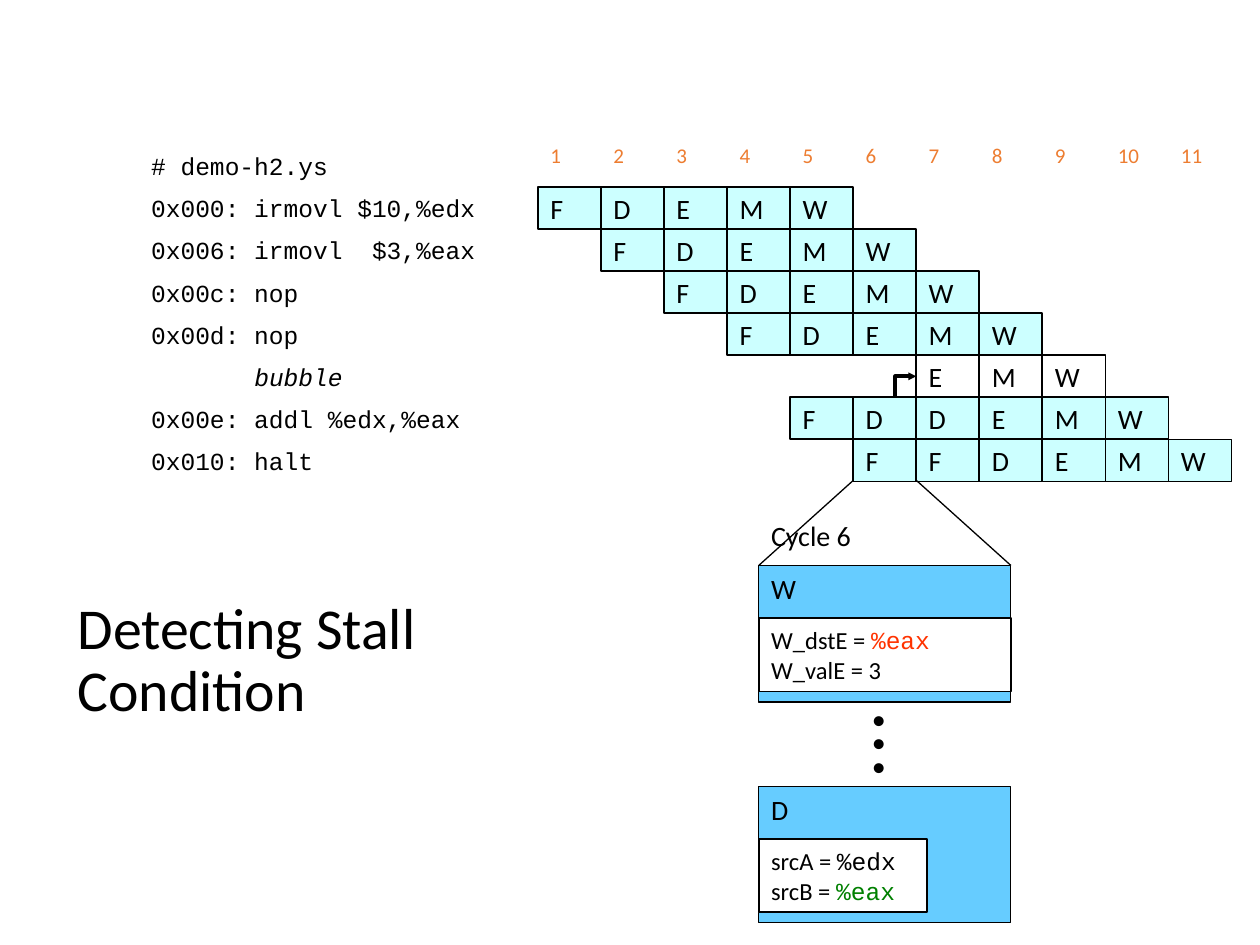
import pptx
import pptx.dml.color
import pptx.enum.shapes
import pptx.enum.text
import pptx.oxml
import pptx.oxml.ns
import pptx.util

PX = 914400 // 120
COL, ROW = 60, 40
SANS, MONO = "Calibri", "Courier New"
BLACK, WHITE, ORANGE = "000000", "FFFFFF", "ED7D31"
RED, GREEN, CYAN, BLUE = "FF3300", "008000", "CCFFFF", "66CCFF"
TOP = pptx.enum.text.MSO_ANCHOR.TOP
MIDDLE = pptx.enum.text.MSO_ANCHOR.MIDDLE

CODE = ["# demo-h2.ys", "0x000: irmovl $10,%edx", "0x006: irmovl  $3,%eax",
        "0x00c: nop", "0x00d: nop", "bubble", "0x00e: addl %edx,%eax",
        "0x010: halt"]
STAGES = [(0, "FDEMW"), (1, "FDEMW"), (2, "FDEMW"), (3, "FDEMW"),
          (6, "EMW"), (4, "FDDEMW"), (5, "FFDEMW")]
BUBBLE_ROW = 4


def px(n):
    return pptx.util.Emu(n * PX)


def rgb(value):
    return pptx.dml.color.RGBColor.from_string(value)


def write(sp, lines, size, anchor=MIDDLE, spacing=None, indent=0):
    tf = sp.text_frame
    tf.word_wrap = True
    tf.vertical_anchor = anchor
    tf.margin_left = px(12 + indent)
    tf.margin_right = px(12)
    tf.margin_top = tf.margin_bottom = px(6)
    for i, runs in enumerate(lines):
        p = tf.add_paragraph() if i else tf.paragraphs[0]
        p.alignment = pptx.enum.text.PP_ALIGN.LEFT
        if spacing:
            p.line_spacing = spacing
        for text, font, color in runs:
            r = p.add_run()
            r.text = text
            r.font.name = font
            r.font.size = pptx.util.Pt(size)
            r.font.color.rgb = rgb(color)
            r.font.italic = text == "bubble"


def label(s, box, lines, size, **layout):
    sp = s.shapes.add_textbox(*map(px, box))
    write(sp, lines, size, **layout)


def block(s, box, lines, size, fill, width=1, anchor=MIDDLE):
    sp = s.shapes.add_shape(pptx.enum.shapes.MSO_SHAPE.RECTANGLE, *map(px, box))
    sp.shadow.inherit = False
    if fill:
        sp.fill.solid()
        sp.fill.fore_color.rgb = rgb(fill)
    else:
        sp.fill.background()
    sp.line.color.rgb = rgb(BLACK)
    sp.line.width = pptx.util.Pt(width)
    write(sp, lines, size, anchor=anchor)


def line(s, x1, y1, x2, y2):
    cn = s.shapes.add_connector(pptx.enum.shapes.MSO_CONNECTOR.STRAIGHT,
                                px(x1), px(y1), px(x2), px(y2))
    cn.line.color.rgb = rgb(BLACK)
    cn.line.width = pptx.util.Pt(0.75)
    pptx.oxml.ns.qn("a:effectLst")
    cn._element.spPr.append(pptx.oxml.parse_xml(
        "<a:effectLst %s/>" % pptx.oxml.ns.nsdecls("a")))


def bubble_arrow(s, x, y):
    fb = s.shapes.build_freeform(px(x), px(y + ROW))
    fb.add_line_segments([(px(x), px(y + 20)), (px(x + 20), px(y + 20))],
                         close=False)
    sp = fb.convert_to_shape()
    sp.shadow.inherit = False
    sp.fill.background()
    sp.line.color.rgb = rgb(BLACK)
    sp.line.width = pptx.util.Pt(2.25)
    sp.line._get_or_add_ln().append(pptx.oxml.parse_xml(
        '<a:tailEnd %s type="triangle" w="sm" len="sm"/>'
        % pptx.oxml.ns.nsdecls("a")))


def code_listing(s, x, y, w):
    for i, text in enumerate(CODE):
        label(s, (x, y + i * ROW, w, ROW), [[(text, MONO, BLACK)]], 14,
              indent=98 if text == "bubble" else 0)


def cycle_numbers(s, x, y):
    for i in range(11):
        label(s, (x + i * COL, y, COL, ROW), [[(str(i + 1), SANS, ORANGE)]], 12)


def pipeline(s, x, y):
    for row, (start, stages) in enumerate(STAGES):
        for i, stage in enumerate(stages):
            box = (x + (start + i) * COL, y + row * ROW, COL, ROW)
            block(s, box, [[(stage, SANS, BLACK)]], 16,
                  None if row == BUBBLE_ROW else CYAN)
    bubble_arrow(s, x + 6 * COL - 20, y + BUBBLE_ROW * ROW)


def stage_panel(s, x, y, w, name, inner_w, lines):
    block(s, (x, y, w, 130), [[(name, SANS, BLACK)]], 16, BLUE, 0.75, TOP)
    block(s, (x, y + 50, inner_w, 70), lines, 14, WHITE)


def cycle_detail(s, x, y, w):
    middle = x + w // 2
    line(s, middle - COL // 2, y - 81, x, y)
    line(s, middle + COL // 2, y - 81, x + w, y)
    label(s, (x, y - 51, w, 44), [[("Cycle 6", SANS, BLACK)]], 16, anchor=TOP)
    stage_panel(s, x, y, w, "W", w,
                [[("W_dstE = ", SANS, BLACK), ("%eax", MONO, RED)],
                 [("W_valE = 3", SANS, BLACK)]])
    label(s, (x + 96, y + 132, 38, 82), [[("•", SANS, BLACK)]] * 3, 16,
          anchor=TOP, spacing=0.7)
    stage_panel(s, x, y + 210, w, "D", 160,
                [[("srcA = ", SANS, BLACK), ("%edx", MONO, BLACK)],
                 [("srcB = ", SANS, BLACK), ("%eax", MONO, GREEN)]])


def main():
    prs = pptx.Presentation()
    prs.slide_width, prs.slide_height = px(1199), px(899)
    s = prs.slides.add_slide(prs.slide_layouts[6])
    label(s, (62, 509, 510, 241),
          [[("Detecting Stall Condition", SANS, BLACK)]], 33, spacing=0.9)
    code_listing(s, 132, 138, 340)
    cycle_numbers(s, 512, 128)
    pipeline(s, 512, 178)
    cycle_detail(s, 722, 538, 240)
    prs.save("out.pptx")


if __name__ == "__main__":
    main()
